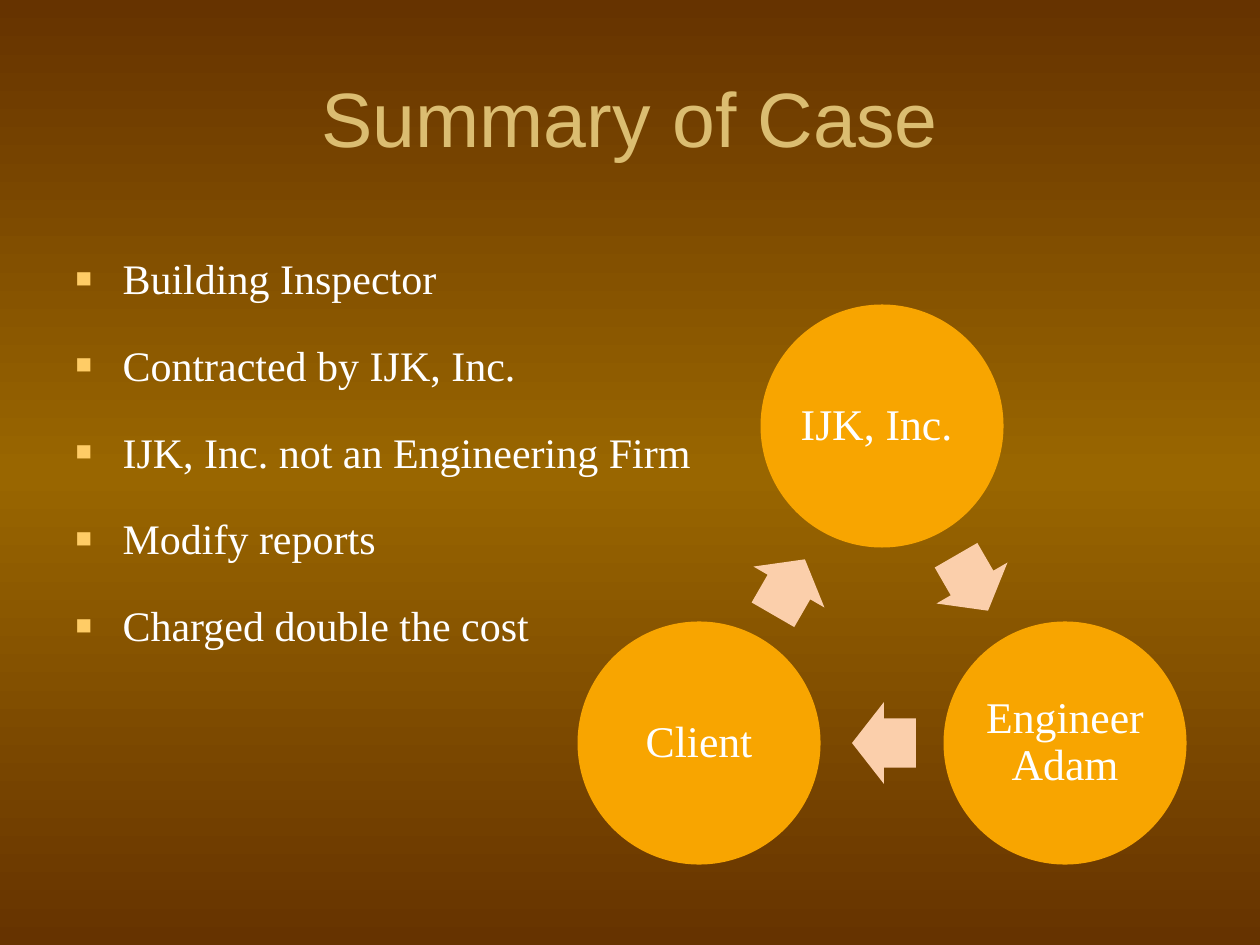
from copy import deepcopy

from lxml import etree
from pptx import Presentation
from pptx import util as u
from pptx.dml.color import RGBColor
from pptx.enum import shapes, text
from pptx.oxml import ns

BROWN = RGBColor(0x66, 0x33, 0x00)
OLIVE = RGBColor(0x99, 0x66, 0x00)
SAND = RGBColor(0xDB, 0xBD, 0x71)
GOLD = RGBColor(0xFF, 0xCC, 0x66)
AMBER = RGBColor(0xF8, 0xA5, 0x00)
PEACH = RGBColor(0xFB, 0xCF, 0xAB)
WHITE = RGBColor(0xFF, 0xFF, 0xFF)
SANS, SERIF = "Arial", "Times New Roman"
DISC = 243
ARROW = (64, 82)


def px(n):
    return u.Emu(round(n * 914400 / 126))


class Deck:
    def __init__(self):
        self.prs = Presentation()
        self.prs.slide_width, self.prs.slide_height = px(1260), px(945)
        self.slide = self.prs.slides.add_slide(self.prs.slide_layouts[1])

    def place(self, item, box):
        item.left, item.top, item.width, item.height = map(px, box)

    def style(self, para, font, size, color):
        for run in para.runs:
            run.font.name = font
            run.font.size = u.Pt(size)
            run.font.color.rgb = color

    def backdrop(self):
        fill = self.slide.background.fill
        fill.gradient()
        fill.gradient_angle = 270
        for stop, pos in zip(fill.gradient_stops, (0, 1)):
            stop.color.rgb = BROWN
            stop.position = pos
        stops = self.slide._element.find(".//" + ns.qn("a:gsLst"))
        stops.insert(1, deepcopy(stops[0]))
        mid = fill.gradient_stops[1]
        mid.color.rgb = OLIVE
        mid.position = 0.5

    def title(self, words, box):
        item = self.slide.shapes.title
        self.place(item, box)
        frame = item.text_frame
        frame.text = words
        frame.vertical_anchor = text.MSO_ANCHOR.MIDDLE
        para = frame.paragraphs[0]
        para.alignment = text.PP_ALIGN.CENTER
        self.style(para, SANS, 44, SAND)

    def bullet(self, para):
        props = para._p.get_or_add_pPr()
        props.set("marL", str(px(47)))
        props.set("indent", str(px(-47)))
        color = etree.SubElement(props, ns.qn("a:buClr"))
        etree.SubElement(color, ns.qn("a:srgbClr"), val=str(GOLD))
        etree.SubElement(props, ns.qn("a:buSzPct"), val="65000")
        etree.SubElement(props, ns.qn("a:buFont"), typeface=SANS)
        etree.SubElement(props, ns.qn("a:buChar"), char="■")

    def body(self, lines, box):
        item = self.slide.placeholders[1]
        self.place(item, box)
        frame = item.text_frame
        frame.text = "\n".join(lines)
        for para in frame.paragraphs:
            para.line_spacing = 1.5
            para.space_before = u.Pt(6.4)
            self.bullet(para)
            self.style(para, SERIF, 24, WHITE)

    def shape(self, kind, mid, size, color):
        (x, y), (w, h) = mid, size
        item = self.slide.shapes.add_shape(
            kind, px(x - w / 2), px(y - h / 2), px(w), px(h))
        item.shadow.inherit = False
        item.fill.solid()
        item.fill.fore_color.rgb = color
        item.line.fill.background()
        return item

    def disc(self, words, mid):
        item = self.shape(shapes.MSO_SHAPE.OVAL, mid, (DISC, DISC), AMBER)
        frame = item.text_frame
        frame.text = words
        frame.word_wrap = True
        frame.vertical_anchor = text.MSO_ANCHOR.MIDDLE
        frame.margin_left = frame.margin_right = px(4)
        frame.margin_top = frame.margin_bottom = px(4)
        para = frame.paragraphs[0]
        para.alignment = text.PP_ALIGN.CENTER
        para.line_spacing = 0.9
        self.style(para, SERIF, 25, WHITE)

    def arrow(self, mid, turn):
        item = self.shape(shapes.MSO_SHAPE.RIGHT_ARROW, mid, ARROW, PEACH)
        item.adjustments[0] = 0.6
        item.adjustments[1] = 0.5
        item.rotation = turn


def main():
    deck = Deck()
    deck.backdrop()
    deck.title("Summary of Case", (63, 38, 1134, 157))
    deck.body(["Building Inspector", "Contracted by IJK, Inc.",
               "IJK, Inc. not an Engineering Firm", "Modify reports",
               "Charged double the cost"], (63, 221, 1134, 624))
    cycle = [("IJK, Inc. ", (882, 426), (972, 583), 60),
             ("Engineer Adam", (1065, 743), (884, 743), 180),
             ("Client", (699, 743), (789, 587), 300)]
    for name, mid, link, turn in cycle:
        deck.disc(name, mid)
        deck.arrow(link, turn)
    deck.prs.save("out.pptx")


if __name__ == "__main__":
    main()
